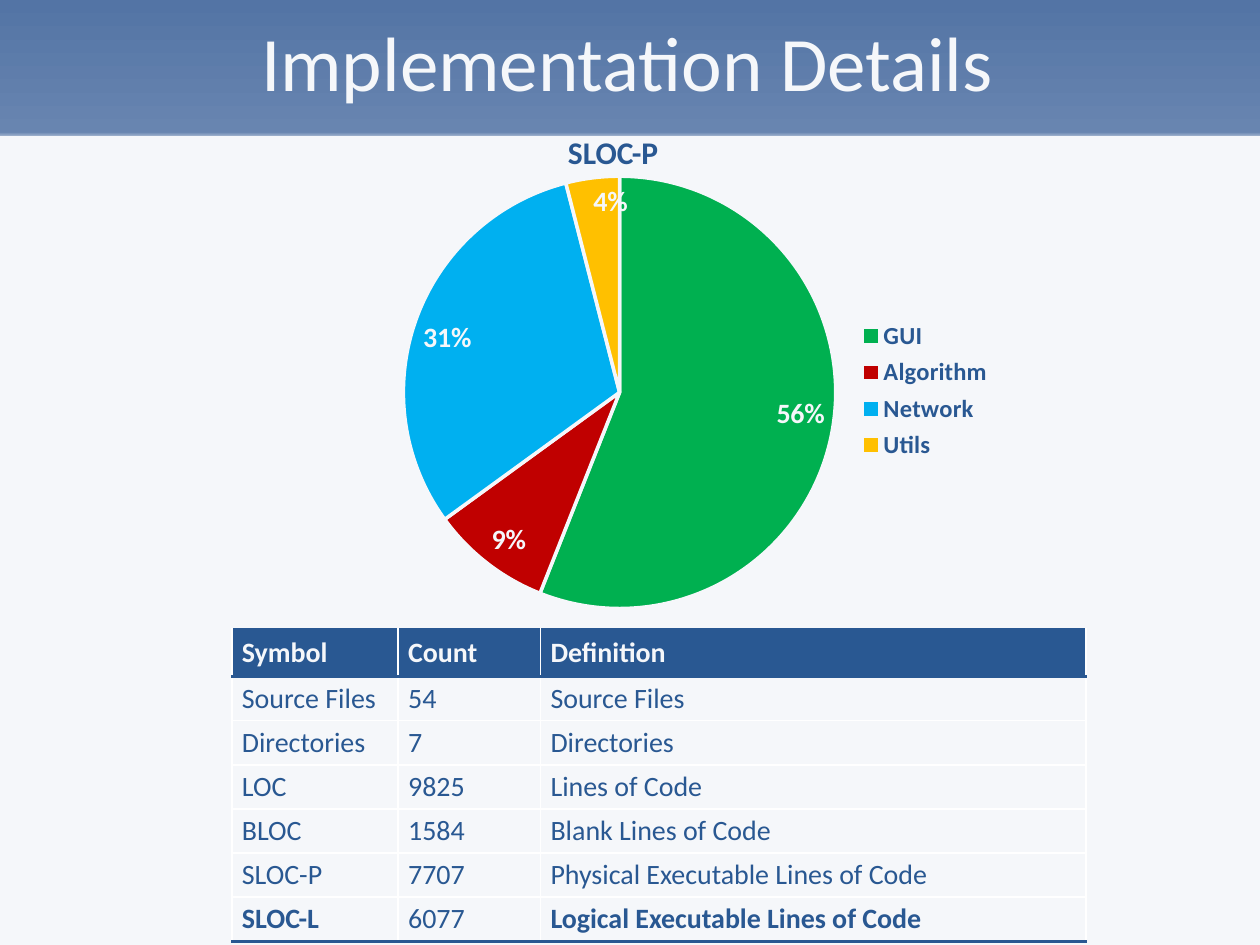
from dataclasses import dataclass

from lxml import etree
from pptx import Presentation
from pptx.chart.data import CategoryChartData
from pptx.dml.color import RGBColor
from pptx.enum.chart import XL_CHART_TYPE, XL_LABEL_POSITION, XL_LEGEND_POSITION
from pptx.enum.shapes import MSO_SHAPE
from pptx.enum.text import MSO_ANCHOR, MSO_AUTO_SIZE, PP_ALIGN
from pptx.oxml import parse_xml
from pptx.oxml.ns import nsdecls, qn
from pptx.util import Inches, Pt

PIE = XL_CHART_TYPE.PIE
INSIDE_END = XL_LABEL_POSITION.INSIDE_END
RIGHT = XL_LEGEND_POSITION.RIGHT
RECTANGLE = MSO_SHAPE.RECTANGLE
MIDDLE = MSO_ANCHOR.MIDDLE
CENTER = PP_ALIGN.CENTER
FIT_SHAPE = MSO_AUTO_SIZE.SHAPE_TO_FIT_TEXT

TITLE = "Implementation Details"
CHART_TITLE = "SLOC-P"
SHARES = [
    ("GUI", 56, "00B050"),
    ("Algorithm", 9, "C00000"),
    ("Network", 31, "00B0F0"),
    ("Utils", 4, "FFC000"),
]
TABLE = [
    ("Symbol", "Count", "Definition"),
    ("Source Files", "54", "Source Files"),
    ("Directories", "7", "Directories"),
    ("LOC", "9825", "Lines of Code"),
    ("BLOC", "1584", "Blank Lines of Code"),
    ("SLOC-P", "7707", "Physical Executable Lines of Code"),
    ("SLOC-L", "6077", "Logical Executable Lines of Code"),
]
BOLD_CELLS = {(6, 0), (6, 2)}
COLUMN_WIDTHS = [1.32, 1.13, 4.33]
HEADER_HEIGHT, ROW_HEIGHT = 0.37, 0.35
BACKGROUND_STOPS = [(0, "5374A5"), (14, "6885B0"), (15, "F5F7FA")]
CHART_BOX = (2.8, 0.94, 5.43, 4.17)
PIE_BOX = (3.2, 1.4, 3.43, 3.43)
LEGEND_BOX = (6.77, 2.5, 1.15, 1.2)


@dataclass(frozen=True)
class Theme:
    font: str = "Calibri"
    ink: str = "295892"
    paper: str = "F5F7FA"
    title: int = 44
    heading: int = 18
    body: int = 16
    legend: int = 14
    chart: int = 10
    rule: int = 2


THEME = Theme()


def rgb(value):
    return RGBColor.from_string(value)


def inches(box):
    return [Inches(length) for length in box]


def style(font, size, color, bold=False):
    font.name = THEME.font
    font.size = Pt(size)
    font.bold = bold
    font.color.rgb = rgb(color)


def paint_background(slide):
    fill = slide.background.fill
    fill.gradient()
    fill.gradient_angle = 270
    stops = next(slide.background._cSld.iter(qn("a:gsLst")))
    stops.clear()
    for percent, color in BACKGROUND_STOPS:
        stop = etree.SubElement(stops, qn("a:gs"), pos=str(percent * 1000))
        etree.SubElement(stop, qn("a:srgbClr"), val=color)


def add_panel(slide):
    panel = slide.shapes.add_shape(RECTANGLE, *inches((0, 1.08, 10, 6.41)))
    panel.shadow.inherit = False
    panel.fill.solid()
    panel.fill.fore_color.rgb = rgb(THEME.paper)
    panel.line.fill.background()


def set_title(slide):
    title = slide.shapes.title
    title.left, title.top, title.width, title.height = inches((0, -0.03, 9.96, 1.02))
    frame = title.text_frame
    frame.text = TITLE
    frame.vertical_anchor = MIDDLE
    frame.paragraphs[0].alignment = CENTER
    style(frame.paragraphs[0].font, THEME.title, THEME.paper)


def manual_layout(box, inner=False):
    """Layout XML for a box in slide inches, as fractions of the chart."""
    left, top, width, height = CHART_BOX
    fractions = {
        "x": (box[0] - left) / width,
        "y": (box[1] - top) / height,
        "w": box[2] / width,
        "h": box[3] / height,
    }
    target = '<c:layoutTarget val="inner"/>' if inner else ""
    modes = '<c:xMode val="edge"/><c:yMode val="edge"/>'
    sizes = "".join(f'<c:{key} val="{value:.3f}"/>' for key, value in fractions.items())
    return parse_xml(
        f'<c:layout {nsdecls("c")}><c:manualLayout>{target}{modes}{sizes}'
        "</c:manualLayout></c:layout>"
    )


def add_pie(slide):
    data = CategoryChartData()
    data.categories = [name for name, _, _ in SHARES]
    data.add_series("Series 1", [value for _, value, _ in SHARES])
    chart = slide.shapes.add_chart(PIE, *inches(CHART_BOX), data).chart
    style(chart.font, THEME.chart, THEME.ink)
    chart.has_title = False

    plot = chart.plots[0]
    plot.vary_by_categories = True
    for index, (_, _, color) in enumerate(SHARES):
        form = plot.series[0].points[index].format
        form.fill.solid()
        form.fill.fore_color.rgb = rgb(color)
        form.line.color.rgb = rgb(THEME.paper)
        form.line.width = Pt(THEME.rule)

    labels = plot.series[0].data_labels
    labels.show_value = False
    labels.show_percentage = True
    labels.number_format = "0%"
    labels.number_format_is_linked = False
    labels.position = INSIDE_END
    style(labels.font, THEME.body, THEME.paper, True)

    chart.has_legend = True
    legend = chart.legend
    legend.position = RIGHT
    legend.include_in_layout = False
    style(legend.font, THEME.legend, THEME.ink, True)

    plot_area = chart._chartSpace.chart.plotArea
    for layout in plot_area.findall(qn("c:layout")):
        plot_area.remove(layout)
    plot_area.insert(0, manual_layout(PIE_BOX, inner=True))
    legend_element = legend._element
    for layout in legend_element.findall(qn("c:layout")):
        legend_element.remove(layout)
    legend_element.find(qn("c:legendPos")).addnext(manual_layout(LEGEND_BOX))


def add_chart_title(slide):
    frame = slide.shapes.add_textbox(*inches((4.41, 1.01, 0.94, 0.4))).text_frame
    frame.word_wrap = False
    frame.auto_size = FIT_SHAPE
    frame.text = CHART_TITLE
    style(frame.paragraphs[0].font, THEME.heading, THEME.ink, True)


def add_border(cell, side):
    properties = cell._tc.get_or_add_tcPr()
    line = parse_xml(
        f'<a:{side} {nsdecls("a")} w="{Pt(THEME.rule)}"><a:solidFill>'
        f'<a:srgbClr val="{THEME.ink}"/></a:solidFill></a:{side}>'
    )
    properties.find(qn("a:solidFill")).addprevious(line)


def add_table(slide):
    last = len(TABLE) - 1
    heights = [HEADER_HEIGHT] + [ROW_HEIGHT] * last
    box = (1.84, 5, sum(COLUMN_WIDTHS), sum(heights))
    table = slide.shapes.add_table(len(TABLE), len(COLUMN_WIDTHS), *inches(box)).table
    table.horz_banding = False
    for column, width in zip(table.columns, COLUMN_WIDTHS):
        column.width = Inches(width)
    for row_index, (texts, height) in enumerate(zip(TABLE, heights)):
        table.rows[row_index].height = Inches(height)
        header = row_index == 0
        fill, color = (THEME.ink, THEME.paper) if header else (THEME.paper, THEME.ink)
        sides = ("lnT", "lnB") if header else ("lnB",) if row_index == last else ()
        for column_index, text in enumerate(texts):
            cell = table.cell(row_index, column_index)
            cell.text = text
            cell.vertical_anchor = MIDDLE
            cell.margin_left = cell.margin_right = Inches(0.08)
            cell.margin_top = cell.margin_bottom = Inches(0.04)
            cell.fill.solid()
            cell.fill.fore_color.rgb = rgb(fill)
            bold = header or (row_index, column_index) in BOLD_CELLS
            style(cell.text_frame.paragraphs[0].font, THEME.body, color, bold)
            for side in sides:
                add_border(cell, side)


def main():
    presentation = Presentation()
    presentation.slide_width, presentation.slide_height = inches((10, 7.5))
    slide = presentation.slides.add_slide(presentation.slide_layouts[5])
    for build in (paint_background, add_panel, set_title, add_pie, add_chart_title, add_table):
        build(slide)
    presentation.save("out.pptx")


if __name__ == "__main__":
    main()
